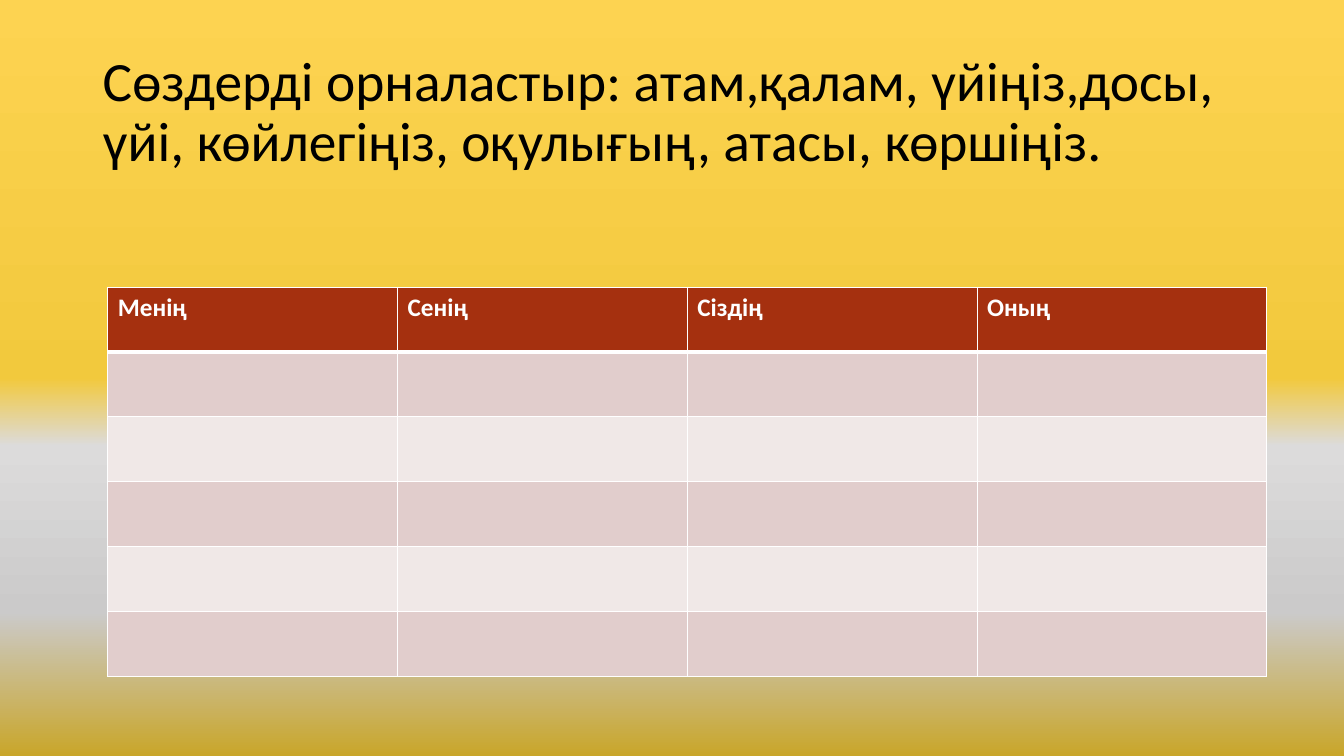
from lxml import etree
from pptx import Presentation
from pptx.dml.color import RGBColor
from pptx.enum.text import MSO_ANCHOR, PP_ALIGN
from pptx.oxml.ns import qn
from pptx.util import Pt

MIDDLE = MSO_ANCHOR.MIDDLE
LEFT = PP_ALIGN.LEFT
TITLE_ONLY = 5

WORDS = ("Сөздерді орналастыр: атам,қалам, үйіңіз,досы, "
         "үйі, көйлегіңіз, оқулығың, атасы, көршіңіз.")
OWNERS = ["Менің", "Сенің", "Сіздің", "Оның"]
BLANK_ROWS = 5
BACKDROP = [(0, "FDD351"), (50, "F2C93D"), (59, "DCDBDB"),
            (81, "CBCACA"), (100, "C9A62A")]


def rgb(hex_color):
    return RGBColor.from_string(hex_color)


class WordSlide:
    font = "Calibri"
    ink, light, header = "000000", "FFFFFF", "A5300F"
    bands = ("E1CDCC", "F0E8E7")
    rule, header_rule = 1, 3

    def __init__(self, deck):
        self.slide = deck.slides.add_slide(deck.slide_layouts[TITLE_ONLY])

    def style(self, paragraph, size, color, bold=False):
        font = paragraph.font
        font.name, font.size, font.bold = self.font, Pt(size), bold
        font.color.rgb = rgb(color)

    def background(self, stops):
        fill = self.slide.background.fill
        fill.gradient()
        fill.gradient_angle = 270
        stop_list = self.slide.element.find(".//" + qn("a:gsLst"))
        for default_stop in list(stop_list):
            stop_list.remove(default_stop)
        for percent, color in stops:
            stop = etree.SubElement(stop_list, qn("a:gs"), pos=str(percent * 1000))
            etree.SubElement(stop, qn("a:srgbClr"), val=color)

    def title(self, text, left, top, width, height, size):
        heading = self.slide.shapes.title
        heading.left, heading.top = Pt(left), Pt(top)
        heading.width, heading.height = Pt(width), Pt(height)
        frame = heading.text_frame
        frame.text = text
        frame.word_wrap = True
        frame.vertical_anchor = MIDDLE
        line = frame.paragraphs[0]
        line.alignment = LEFT
        line.line_spacing = 0.9
        self.style(line, size, self.ink)

    def borders(self, cell, top, bottom):
        properties = cell._tc.get_or_add_tcPr()
        widths = {"L": self.rule, "R": self.rule, "T": top, "B": bottom}
        for side, width in widths.items():
            line = etree.SubElement(properties, qn("a:ln" + side), w=str(Pt(width)))
            solid = etree.SubElement(line, qn("a:solidFill"))
            etree.SubElement(solid, qn("a:srgbClr"), val=self.light)

    def table(self, headings, blank_rows, left, top, width, height, size):
        rows = blank_rows + 1
        table = self.slide.shapes.add_table(
            rows, len(headings), Pt(left), Pt(top), Pt(width), Pt(height)).table
        for r in range(rows):
            above = self.header_rule if r == 1 else self.rule
            below = self.header_rule if r == 0 else self.rule
            color = self.bands[(r - 1) % 2] if r else self.header
            for c, heading in enumerate(headings):
                cell = table.cell(r, c)
                self.borders(cell, above, below)
                cell.fill.solid()
                cell.fill.fore_color.rgb = rgb(color)
                if r == 0:
                    cell.text = heading
                    self.style(cell.text_frame.paragraphs[0], size, self.light, True)


def main():
    deck = Presentation()
    deck.slide_width, deck.slide_height = Pt(960), Pt(540)
    words = WordSlide(deck)

    # Gradient backdrop
    words.background(BACKDROP)

    # Task with the words to sort
    words.title(WORDS, 66.2, 28.8, 828, 104.4, size=39.6)

    # Sorting table, one column per owner
    words.table(OWNERS, BLANK_ROWS, 77, 205.2, 828, 277.8, size=18)

    deck.save("out.pptx")


if __name__ == "__main__":
    main()
